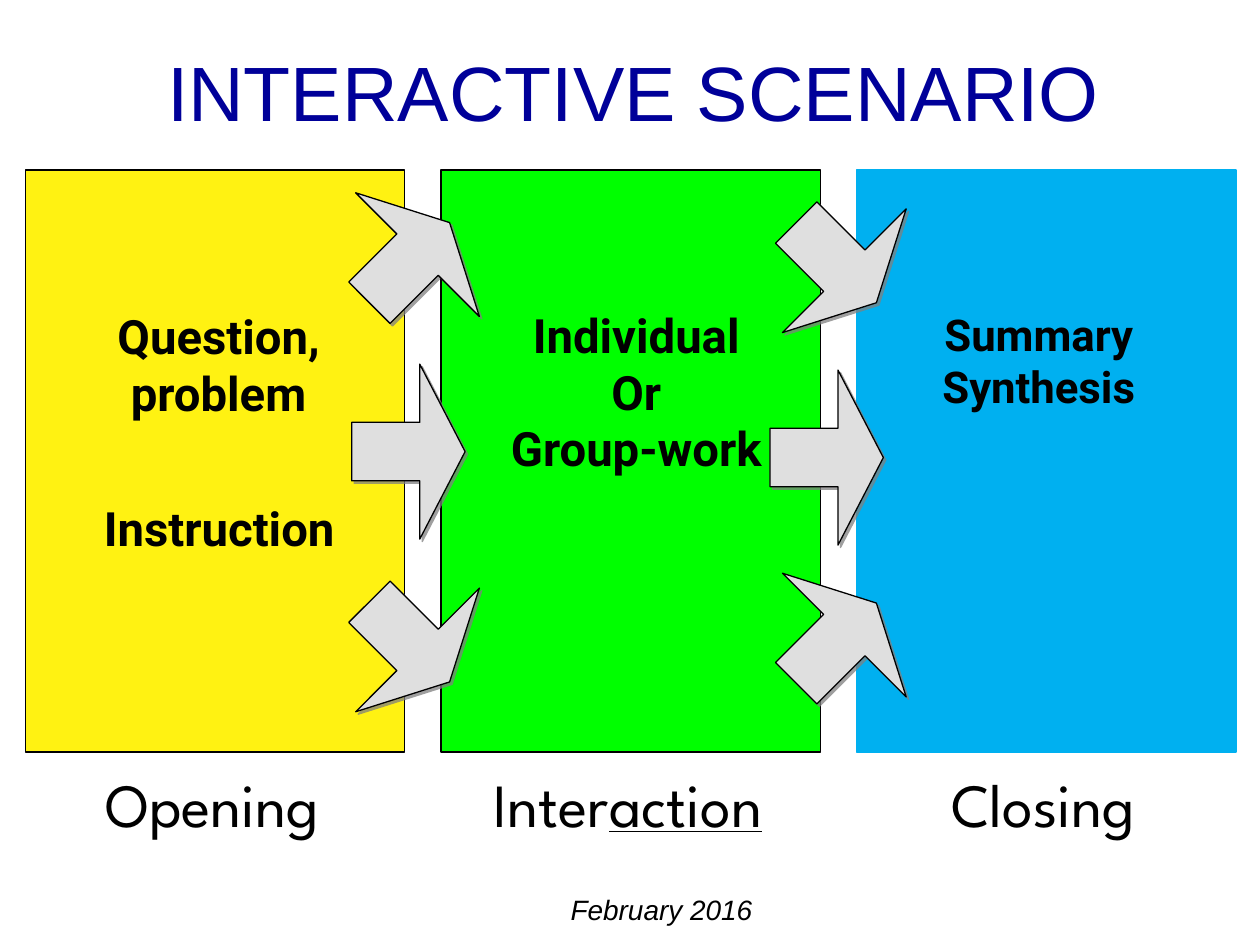
from lxml.etree import SubElement, fromstring
from pptx import Presentation
from pptx.dml.color import RGBColor
from pptx.enum.shapes import MSO_SHAPE
from pptx.enum.text import MSO_ANCHOR, PP_ALIGN
from pptx.oxml.ns import qn
from pptx.util import Pt

BLACK = RGBColor(0x00, 0x00, 0x00)
NAVY = RGBColor(0x00, 0x00, 0x99)
YELLOW = RGBColor(0xFF, 0xF2, 0x12)
GREEN = RGBColor(0x00, 0xFF, 0x00)
BLUE = RGBColor(0x00, 0xB0, 0xF0)
GRAY = RGBColor(0xDF, 0xDF, 0xDF)

TITLE = "INTERACTIVE SCENARIO"
FOOTER = "February 2016"
PHASES = [(YELLOW, BLACK), (GREEN, BLACK), (BLUE, BLUE)]  # fill, line
# left, width, runs as (text, underlined)
CAPTIONS = [
    (30.2, 182.2, [("Opening", False)]),
    (260.6, 196.6, [("Inter", False), ("action", True)]),
    (491, 210.2, [("Closing", False)]),
]
# left, top, width, height, size, lines
LABELS = [
    (15.8, 175.7, 218.2, 80, 27, ["Question, problem"]),
    (38.9, 285.1, 172.8, 43, 27, ["Instruction"]),
    (247.7, 175, 231.8, 80, 27, ["Individual", "Or", "Group-work"]),
    (479.5, 175.7, 228.2, 80, 25, ["Summary", "Synthesis"]),
]
# left, top, rotation
ARROWS = [
    (201, 208.1, 0), (201.6, 316.8, 45), (201.6, 100.1, 315),
    (440, 211.5, 0), (445.5, 317.5, 315), (445.5, 100.1, 45),
]
ARROW_OUTLINE = [(0, 33.3), (0, 66.7), (38.9, 66.7), (38.9, 100),
                 (64.8, 50), (38.9, 0), (38.9, 33.3)]
COLUMN_LEFT, COLUMN_TOP, COLUMN_PITCH = 14.4, 97.2, 237.6
COLUMN_WIDTH, COLUMN_HEIGHT = 216.7, 332.6
CAPTION_TOP, CAPTION_HEIGHT = 437.8, 54

SHADOW = (
    '<a:effectLst xmlns:a="http://schemas.openxmlformats.org/drawingml/2006/main">'
    '<a:outerShdw dist="25400" dir="2700000" algn="ctr" rotWithShape="0">'
    '<a:srgbClr val="808080"><a:alpha val="75000"/></a:srgbClr>'
    '</a:outerShdw></a:effectLst>'
)


def place(shape, left, top, width, height):
    shape.left, shape.top = Pt(left), Pt(top)
    shape.width, shape.height = Pt(width), Pt(height)


def paint(shape, fill, line):
    shape.shadow.inherit = False
    shape.fill.solid()
    shape.fill.fore_color.rgb = fill
    shape.line.color.rgb = line
    shape.line.width = Pt(0.75)


def style(run, name, size, color=BLACK):
    run.font.name, run.font.size = name, Pt(size)
    run.font.color.rgb = color


def add_text(slide, left, top, width, height):
    """Add a wrapping text box without margins and return its text frame."""
    frame = slide.shapes.add_textbox(Pt(left), Pt(top), Pt(width), Pt(height)).text_frame
    frame.word_wrap = True
    frame.margin_left = frame.margin_right = frame.margin_top = frame.margin_bottom = 0
    return frame


def add_arrow(slide, left, top, rotation):
    points = [(Pt(left + x), Pt(top + y)) for x, y in ARROW_OUTLINE]
    builder = slide.shapes.build_freeform(*points[0])
    builder.add_line_segments(points[1:], close=True)
    arrow = builder.convert_to_shape()
    paint(arrow, GRAY, BLACK)
    arrow.rotation = rotation
    properties = arrow._element.spPr
    properties.replace(properties.find(qn("a:effectLst")), fromstring(SHADOW))


def main():
    presentation = Presentation()
    presentation.slide_width, presentation.slide_height = Pt(720), Pt(540)
    slide = presentation.slides.add_slide(presentation.slide_layouts[5])

    title = slide.shapes.title
    place(title, 20.2, -2.2, 684, 108)
    title.text_frame.text = TITLE
    title.text_frame.vertical_anchor = MSO_ANCHOR.MIDDLE
    paragraph = title.text_frame.paragraphs[0]
    paragraph.alignment = PP_ALIGN.CENTER
    style(paragraph.runs[0], "Arial", 44, NAVY)

    footer = add_text(slide, 36, 502.6, 684, 33.8)
    footer.text = FOOTER
    footer.vertical_anchor = MSO_ANCHOR.MIDDLE
    paragraph = footer.paragraphs[0]
    paragraph.alignment = PP_ALIGN.CENTER
    style(paragraph.runs[0], "Arial", 16)
    paragraph.runs[0].font.italic = True

    for index, (fill, line) in enumerate(PHASES):
        column = slide.shapes.add_shape(
            MSO_SHAPE.RECTANGLE, Pt(COLUMN_LEFT + index * COLUMN_PITCH), Pt(COLUMN_TOP),
            Pt(COLUMN_WIDTH), Pt(COLUMN_HEIGHT))
        paint(column, fill, line)

    for left, width, runs in CAPTIONS:
        paragraph = add_text(slide, left, CAPTION_TOP, width, CAPTION_HEIGHT).paragraphs[0]
        paragraph.alignment = PP_ALIGN.CENTER
        for text, underlined in runs:
            run = paragraph.add_run()
            run.text = text
            style(run, "League Spartan", 35)
            if underlined:
                run.font.underline = True

    for left, top, width, height, size, lines in LABELS:
        frame = add_text(slide, left, top, width, height)
        frame.text = "\n".join(lines)
        for paragraph in frame.paragraphs:
            paragraph.alignment = PP_ALIGN.CENTER
            run = paragraph.runs[0]
            style(run, "Roboto", size)
            run.font.bold = True
            run.font._element.find(qn("a:solidFill")).addnext(fromstring(SHADOW))

    for left, top, rotation in ARROWS:
        add_arrow(slide, left, top, rotation)

    presentation.save("out.pptx")


if __name__ == "__main__":
    main()
